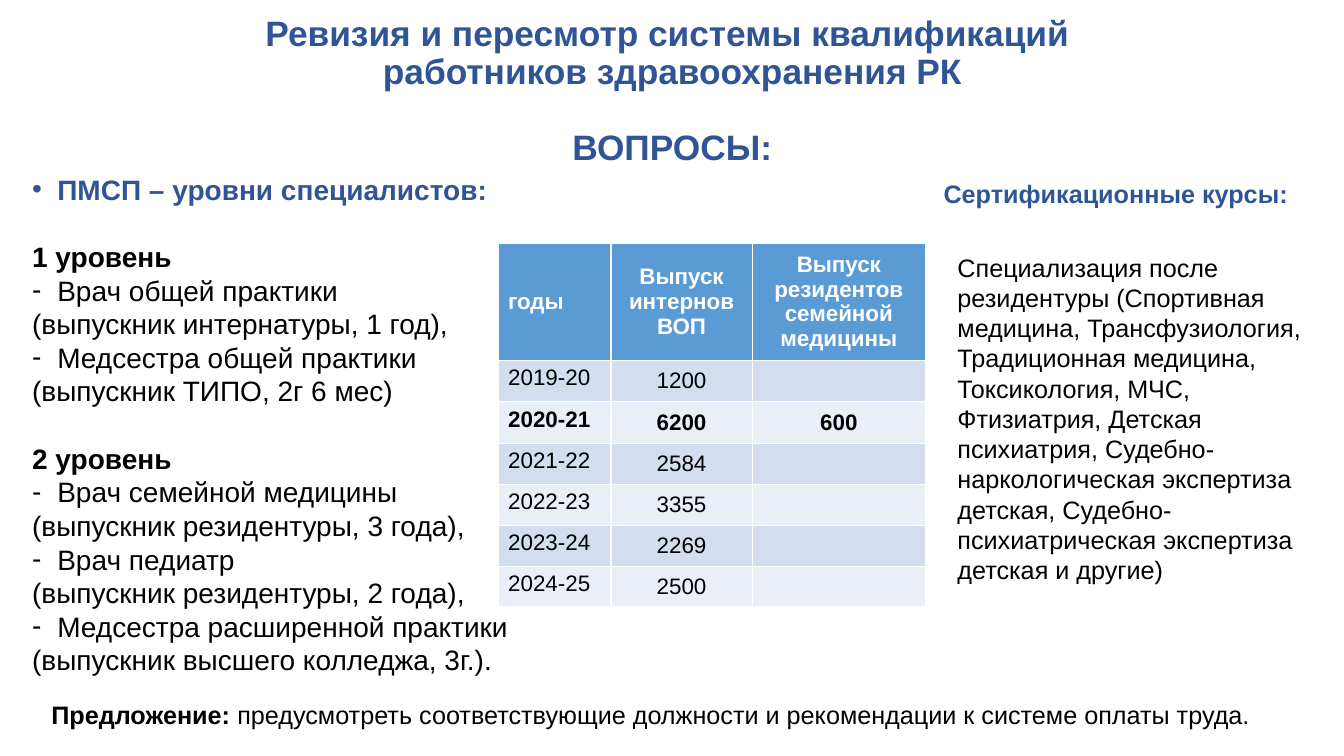
"""Build the slide on revising the qualification system of health workers."""
from lxml.etree import SubElement
from pptx import Presentation
from pptx.dml.color import RGBColor
from pptx.enum.text import MSO_ANCHOR as Anchor, PP_ALIGN as Align
from pptx.oxml.ns import qn
from pptx.util import Inches, Pt

WIDTH, HEIGHT = Inches(13.33), Inches(7.5)
NAVY = RGBColor(0x2F, 0x55, 0x97)
BLACK = RGBColor(0, 0, 0)
WHITE = RGBColor(0xFF, 0xFF, 0xFF)
BLUE = RGBColor(0x5B, 0x9B, 0xD5)
BANDS = RGBColor(0xD2, 0xDE, 0xEF), RGBColor(0xEA, 0xEF, 0xF7)

TITLE = "Ревизия и пересмотр системы квалификаций \vработников здравоохранения РК"
LEVELS = {
    "1 уровень": [
        ("Врач общей практики", "(выпускник интернатуры, 1 год),"),
        ("Медсестра общей практики", "(выпускник ТИПО, 2г 6 мес)"),
    ],
    "2 уровень": [
        ("Врач семейной медицины", "(выпускник резидентуры, 3 года),"),
        ("Врач педиатр", "(выпускник резидентуры, 2 года),"),
        ("Медсестра расширенной практики", "(выпускник высшего колледжа, 3г.)."),
    ],
}
COURSES = (
    "Специализация после резидентуры (Спортивная медицина, Трансфузиология, "
    "Традиционная медицина, Токсикология, МЧС, Фтизиатрия, Детская психиатрия, "
    "Судебно-наркологическая экспертиза  детская, "
    "Судебно-психиатрическая экспертиза  детская и другие)"
)
GRADUATES = [
    ("годы", "Выпуск интернов ВОП", "Выпуск резидентов семейной медицины"),
    ("2019-20", "1200", ""),
    ("2020-21", "6200", "600"),
    ("2021-22", "2584", ""),
    ("2022-23", "3355", ""),
    ("2023-24", "2269", ""),
    ("2024-25", "2500", ""),
]
COLUMN_WIDTHS = 1.12, 1.4, 1.72
ROW_HEIGHTS = 1.16, 0.41, 0.41, 0.41, 0.41, 0.36, 0.36


def area(left, top, width, height):
    """Turn percentages of the slide into lengths."""
    return [int(share * side / 100) for share, side in
            zip((left, top, width, height), (WIDTH, HEIGHT) * 2)]


def add_run(p, text, size, color=BLACK, bold=False):
    """Add formatted text to a paragraph."""
    r = p.add_run()
    r.text = text
    for name, value in {"name": "Arial", "size": Pt(size), "bold": bold}.items():
        setattr(r.font, name, value)
    r.font.color.rgb = color


def add_line(tf, text, size, color=BLACK, bold=False, bullet=None, **layout):
    """Add a paragraph, filling the first one while it is empty."""
    p = tf.paragraphs[0] if not tf.paragraphs[0].runs else tf.add_paragraph()
    for name, value in layout.items():
        setattr(p, name, value)
    if bullet:
        ppr = p._p.get_or_add_pPr()
        ppr.set("marL", str(Inches(0.25)))
        ppr.set("indent", str(-Inches(0.25)))
        SubElement(ppr, qn("a:buFont")).set("typeface", "Arial")
        SubElement(ppr, qn("a:buChar")).set("char", bullet)
    parts = text.split("\v")
    for i, part in enumerate(parts):
        if i:
            p.add_line_break()
        add_run(p, part, size, color, bold)
    return p


def add_text(s, box, wrap=True, anchor=Anchor.TOP):
    """Add an empty text box and return its frame."""
    tf = s.shapes.add_textbox(*area(*box)).text_frame
    tf.word_wrap, tf.vertical_anchor = wrap, anchor
    return tf


def add_levels(s):
    """Add the list of specialist levels."""
    tf = add_text(s, (1.65, 22.13, 48.3, 63.47))
    add_line(tf, "ПМСП – уровни специалистов:", 20, NAVY, True, "•")
    for level, posts in LEVELS.items():
        add_line(tf, level, 20, bold=True, space_before=Pt(24))
        for post, training in posts:
            add_line(tf, post, 20, bullet="-")
            add_line(tf, training, 20)


def add_graduates(s):
    """Add the table of graduates by year."""
    table = s.shapes.add_table(len(GRADUATES), len(COLUMN_WIDTHS),
                               *area(37.06, 32.13, 31.8, 46.93)).table
    for column, width in zip(table.columns, COLUMN_WIDTHS):
        column.width = Inches(width)
    for i, (row, height, values) in enumerate(zip(table.rows, ROW_HEIGHTS, GRADUATES)):
        row.height = Inches(height)
        for j, (cell, value) in enumerate(zip(row.cells, values)):
            cell.fill.solid()
            cell.fill.fore_color.rgb = BANDS[(i - 1) % 2] if i else BLUE
            cell.vertical_anchor = Anchor.TOP if i and not j else Anchor.MIDDLE
            if value:
                add_line(cell.text_frame, value, 16, BLACK if i else WHITE,
                         not i or values[0] == "2020-21",
                         alignment=Align.CENTER if j else Align.LEFT)


def main():
    """Build and save the slide."""
    prs = Presentation()
    prs.slide_width, prs.slide_height = WIDTH, HEIGHT
    s = prs.slides.add_slide(prs.slide_layouts[6])
    tf = add_text(s, (6.9, 2.53, 86.25, 19.33), anchor=Anchor.MIDDLE)
    centred = {"alignment": Align.CENTER, "line_spacing": 0.9}
    add_line(tf, TITLE, 25.2, NAVY, True, **centred)
    add_line(tf, "ВОПРОСЫ:", 25.2, NAVY, True, space_before=Pt(27), **centred)
    add_levels(s)
    tf = add_text(s, (3.08, 91.87, 93.85, 5.33))
    p = add_line(tf, "Предложение: ", 18, bold=True)
    add_run(p, "предусмотреть соответствующие должности и рекомендации "
               "к системе оплаты труда.", 18)
    add_graduates(s)
    add_line(add_text(s, (70.5, 32.67, 28.06, 45.73)), COURSES, 18)
    add_line(add_text(s, (69.47, 22.93, 27.38, 5.33), wrap=False),
             "Сертификационные курсы:", 18, NAVY, True)
    prs.save("out.pptx")


if __name__ == "__main__":
    main()
